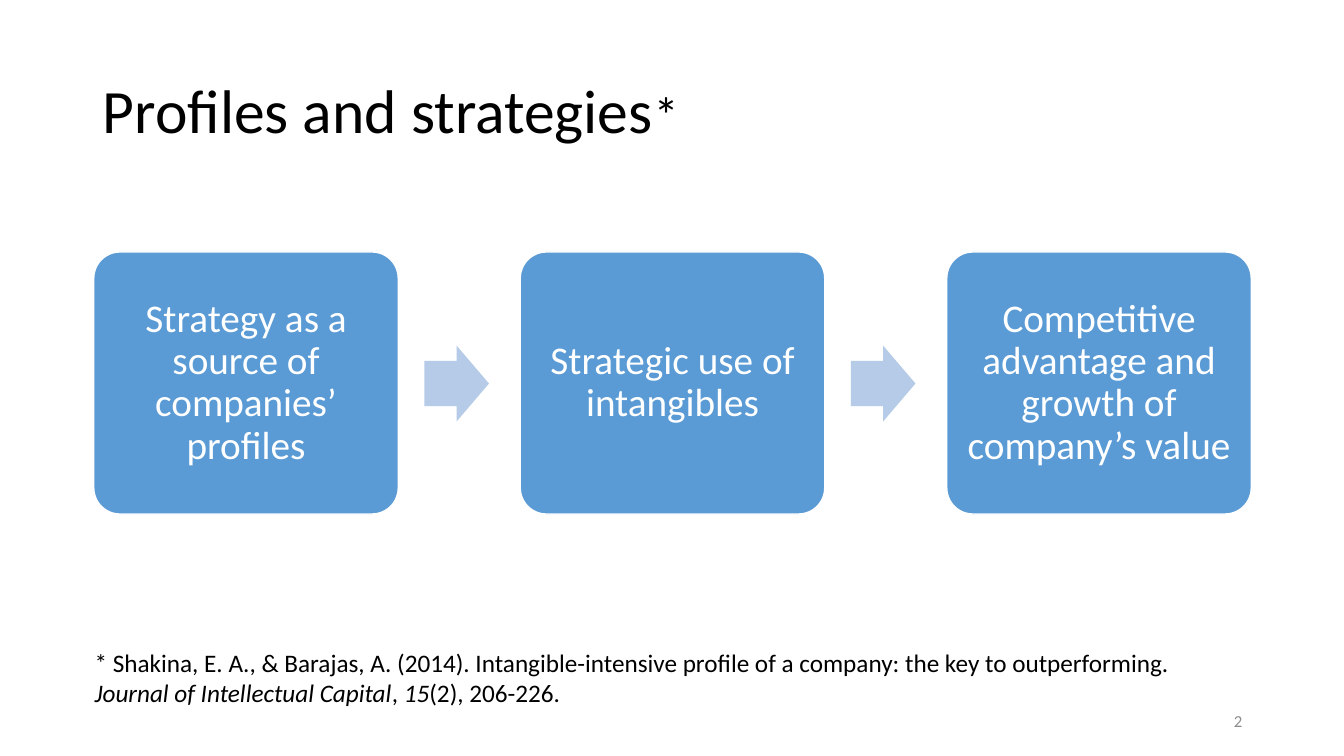
"""Build the slide on profiles and strategies as a three-step process."""
from pptx import Presentation
from pptx.dml.color import RGBColor
from pptx.enum import shapes, text
from pptx.util import Inches, Pt

BLACK = RGBColor(0x00, 0x00, 0x00)
WHITE = RGBColor(0xFF, 0xFF, 0xFF)
GRAY = RGBColor(0x8C, 0x8C, 0x8C)
BLUE = RGBColor(0x5B, 0x9B, 0xD5)
PALE_BLUE = RGBColor(0xB5, 0xCB, 0xE7)

STEPS = [
    "Strategy as a source of companies’ profiles",
    "Strategic use of intangibles",
    "Competitive advantage and growth of company’s value",
]
STEP_LEFT, STEP_PITCH = 0.93, 4.23
ARROW_OFFSET = 3.28
CITATION = [
    [("* Shakina, E. A., & Barajas, A. (2014). Intangible-intensive profile "
      "of a company: the key to outperforming.\u00a0", False)],
    [("Journal of Intellectual Capital", True), (",\u00a0", False),
     ("15", True), ("(2), 206-226.", False)],
]


def style(paragraph, size, color, alignment):
    paragraph.alignment = alignment
    paragraph.font.name = "Calibri"
    paragraph.font.size = Pt(size)
    paragraph.font.color.rgb = color


def add_block(slide, preset, box, adjustments, color):
    shape = slide.shapes.add_shape(preset, *map(Inches, box))
    shape.shadow.inherit = False
    for index, value in enumerate(adjustments):
        shape.adjustments[index] = value
    shape.fill.solid()
    shape.fill.fore_color.rgb = color
    return shape


presentation = Presentation()
presentation.slide_width = Inches(13.33)
presentation.slide_height = Inches(7.5)
slide = presentation.slides.add_slide(presentation.slide_layouts[5])

title = slide.shapes.title
title.left, title.top = Inches(0.92), Inches(0.4)
title.width, title.height = Inches(11.5), Inches(1.45)
title.text_frame.auto_size = text.MSO_AUTO_SIZE.NONE
title.text_frame.vertical_anchor = text.MSO_ANCHOR.MIDDLE
paragraph = title.text_frame.paragraphs[0]
paragraph.line_spacing = 0.9
style(paragraph, 44, BLACK, text.PP_ALIGN.LEFT)
paragraph.add_run().text = "Profiles and strategies"
asterisk = paragraph.add_run()
asterisk.text = "*"
asterisk.font.size = Pt(36)

for index, label in enumerate(STEPS):
    left = STEP_LEFT + index * STEP_PITCH
    step = add_block(slide, shapes.MSO_SHAPE.ROUNDED_RECTANGLE,
                     (left, 2.5, 3.02, 2.6), [0.1], BLUE)
    step.line.color.rgb = WHITE
    step.line.width = Pt(1)
    frame = step.text_frame
    frame.word_wrap = True
    frame.vertical_anchor = text.MSO_ANCHOR.MIDDLE
    frame.margin_left = frame.margin_right = Inches(0.12)
    frame.margin_top = frame.margin_bottom = Inches(0.12)
    paragraph = frame.paragraphs[0]
    paragraph.text = label
    paragraph.line_spacing = 0.9
    style(paragraph, 28, WHITE, text.PP_ALIGN.CENTER)
    if index < len(STEPS) - 1:
        arrow = add_block(slide, shapes.MSO_SHAPE.RIGHT_ARROW,
                          (left + ARROW_OFFSET, 3.43, 0.64, 0.75),
                          [0.6, 0.5], PALE_BLUE)
        arrow.line.fill.background()

number = slide.shapes.add_textbox(Inches(9.42), Inches(6.95), Inches(3), Inches(0.4))
number.text_frame.word_wrap = True
number.text_frame.vertical_anchor = text.MSO_ANCHOR.MIDDLE
paragraph = number.text_frame.paragraphs[0]
paragraph.text = "2"
style(paragraph, 12, GRAY, text.PP_ALIGN.RIGHT)

citation = slide.shapes.add_textbox(Inches(0.84), Inches(6.37), Inches(12.1), Inches(0.71))
frame = citation.text_frame
frame.word_wrap = True
frame.auto_size = text.MSO_AUTO_SIZE.SHAPE_TO_FIT_TEXT
for index, runs in enumerate(CITATION):
    paragraph = frame.add_paragraph() if index else frame.paragraphs[0]
    style(paragraph, 18, BLACK, text.PP_ALIGN.LEFT)
    for words, italic in runs:
        run = paragraph.add_run()
        run.text = words
        run.font.italic = italic

presentation.save("out.pptx")
